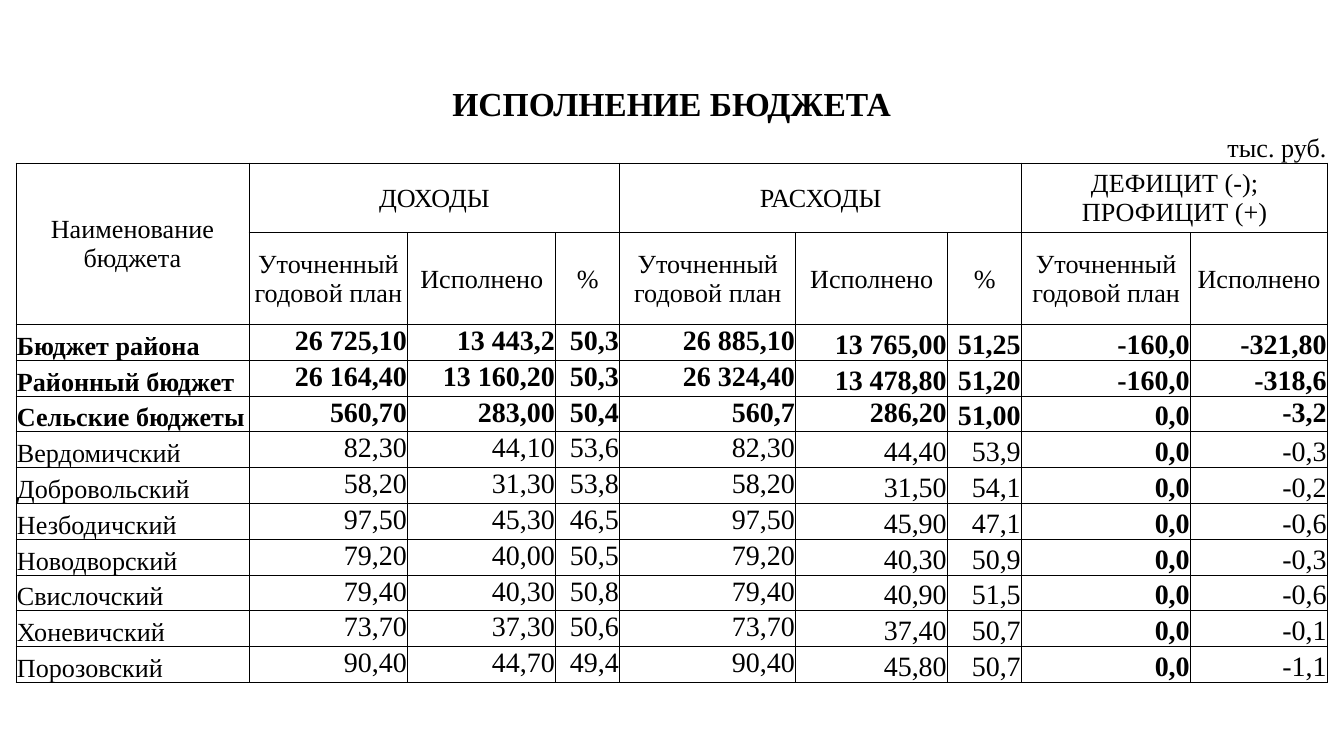
from lxml.etree import SubElement
from pptx import Presentation
from pptx.dml.color import RGBColor
from pptx.enum.text import MSO_ANCHOR, PP_ALIGN
from pptx.oxml.ns import qn
from pptx.util import Pt

SCALE = 9144000 / 1344
COLORS = {"ink": "000000"}
FONT = "Times New Roman"
COLUMN_WIDTHS = [233, 136, 23, 98, 50, 64, 176, 121, 31, 74, 169, 16, 121]
BODY_TOP, BODY_HEIGHT = 4, 358
VALUE_COLUMNS = [1, 3, 5, 6, 7, 9, 10, 11]
TOP_COLUMNS = {1, 3, 5, 6}
TOP_CELLS = {(6, 7), (6, 11)}
DEFICIT_PLAN = 10

GROUPS = [
    (1, 5, "ДОХОДЫ"),
    (6, 9, "РАСХОДЫ"),
    (10, 12, "ДЕФИЦИТ (-); ПРОФИЦИТ (+)"),
]
PLAN, DONE = "Уточненный годовой план", "Исполнено"
HEADINGS = [PLAN, DONE, "%", PLAN, DONE, "%", PLAN, DONE]
BUDGETS = [
    ("Бюджет района", "26 725,10", "13 443,2", "50,3", "26 885,10", "13 765,00", "51,25", "-160,0", "-321,80"),
    ("Районный бюджет", "26 164,40", "13 160,20", "50,3", "26 324,40", "13 478,80", "51,20", "-160,0", "-318,6"),
    ("Сельские бюджеты", "560,70", "283,00", "50,4", "560,7", "286,20", "51,00", "0,0", "-3,2"),
    ("Вердомичский", "82,30", "44,10", "53,6", "82,30", "44,40", "53,9", "0,0", "-0,3"),
    ("Добровольский", "58,20", "31,30", "53,8", "58,20", "31,50", "54,1", "0,0", "-0,2"),
    ("Незбодичский", "97,50", "45,30", "46,5", "97,50", "45,90", "47,1", "0,0", "-0,6"),
    ("Новодворский", "79,20", "40,00", "50,5", "79,20", "40,30", "50,9", "0,0", "-0,3"),
    ("Свислочский", "79,40", "40,30", "50,8", "79,40", "40,90", "51,5", "0,0", "-0,6"),
    ("Хоневичский", "73,70", "37,30", "50,6", "73,70", "37,40", "50,7", "0,0", "-0,1"),
    ("Порозовский", "90,40", "44,70", "49,4", "90,40", "45,80", "50,7", "0,0", "-1,1"),
]
BODY_EDGES = [round(BODY_HEIGHT * i / len(BUDGETS)) for i in range(len(BUDGETS) + 1)]
ROW_HEIGHTS = [46, 35, 70, 92] + [b - a for a, b in zip(BODY_EDGES, BODY_EDGES[1:])]


def px(length):
    return round(length * SCALE)


def write_text(cell, text, size=14, bold=False, align=PP_ALIGN.CENTER, anchor=MSO_ANCHOR.MIDDLE):
    cell.vertical_anchor = anchor
    para = cell.text_frame.paragraphs[0]
    para.alignment = align
    span = para.add_run()
    span.text = text
    span.font.name = FONT
    span.font.size = Pt(size)
    span.font.bold = bold
    span.font.color.rgb = RGBColor.from_string(COLORS["ink"])


class BudgetPage:
    def __init__(self, deck):
        self.page = deck.slides.add_slide(deck.slide_layouts[6])

    def add_grid(self, left, top):
        frame = self.page.shapes.add_table(
            len(ROW_HEIGHTS), len(COLUMN_WIDTHS), px(left), px(top),
            px(sum(COLUMN_WIDTHS)), px(sum(ROW_HEIGHTS)))
        table = frame.table
        table.first_row = False
        table.horz_banding = False
        for column, width in zip(table.columns, COLUMN_WIDTHS):
            column.width = px(width)
        for number, (row, height) in enumerate(zip(table.rows, ROW_HEIGHTS)):
            row.height = px(height)
            sides = "LRTB" if number > 1 else "B" if number == 1 else ""
            for cell in row.cells:
                self.style_cell(cell, sides)
        return table

    def style_cell(self, cell, sides):
        cell.margin_left = cell.margin_right = cell.margin_top = px(1)
        cell.margin_bottom = 0
        properties = cell._tc.get_or_add_tcPr()
        for side in "LRTB":
            line = SubElement(properties, qn(f"a:ln{side}"), w=str(Pt(0.5)))
            if side in sides:
                fill = SubElement(line, qn("a:solidFill"))
                SubElement(fill, qn("a:srgbClr"), val=COLORS["ink"])
            else:
                SubElement(line, qn("a:noFill"))
        cell.fill.background()
        para = cell.text_frame.paragraphs[0]
        SubElement(para._p, qn("a:endParaRPr"), sz="1400")

    def add_header(self, table):
        last = len(COLUMN_WIDTHS) - 1
        table.cell(0, 0).merge(table.cell(0, last))
        write_text(table.cell(0, 0), "ИСПОЛНЕНИЕ БЮДЖЕТА", size=18, bold=True)
        for first in (2, 4, 8, 10):
            table.cell(1, first).merge(table.cell(1, first + 1))
        write_text(table.cell(1, last), "тыс. руб.", align=PP_ALIGN.RIGHT, anchor=MSO_ANCHOR.BOTTOM)
        table.cell(2, 0).merge(table.cell(3, 0))
        write_text(table.cell(2, 0), "Наименование бюджета")
        for first, end, title in GROUPS:
            table.cell(2, first).merge(table.cell(2, end))
            write_text(table.cell(2, first), title)
        for column, heading in zip(VALUE_COLUMNS, HEADINGS):
            write_text(table.cell(3, column), heading)

    def add_budgets(self, table):
        for row in range(BODY_TOP - 1, len(ROW_HEIGHTS)):
            for first in (1, 3, 7, 11):
                table.cell(row, first).merge(table.cell(row, first + 1))
        for row, (name, *values) in enumerate(BUDGETS, BODY_TOP):
            total = row < BODY_TOP + 3
            write_text(table.cell(row, 0), name, bold=total, align=PP_ALIGN.LEFT, anchor=MSO_ANCHOR.BOTTOM)
            for column, value in zip(VALUE_COLUMNS, values):
                at_top = column in TOP_COLUMNS or (row, column) in TOP_CELLS
                write_text(
                    table.cell(row, column), value, size=15,
                    bold=total or column == DEFICIT_PLAN, align=PP_ALIGN.RIGHT,
                    anchor=MSO_ANCHOR.TOP if at_top else MSO_ANCHOR.BOTTOM)


def main():
    deck = Presentation()
    deck.slide_width, deck.slide_height = px(1344), px(756)
    budget = BudgetPage(deck)
    table = budget.add_grid(16, 82)
    budget.add_header(table)
    budget.add_budgets(table)
    deck.save("out.pptx")


if __name__ == "__main__":
    main()
